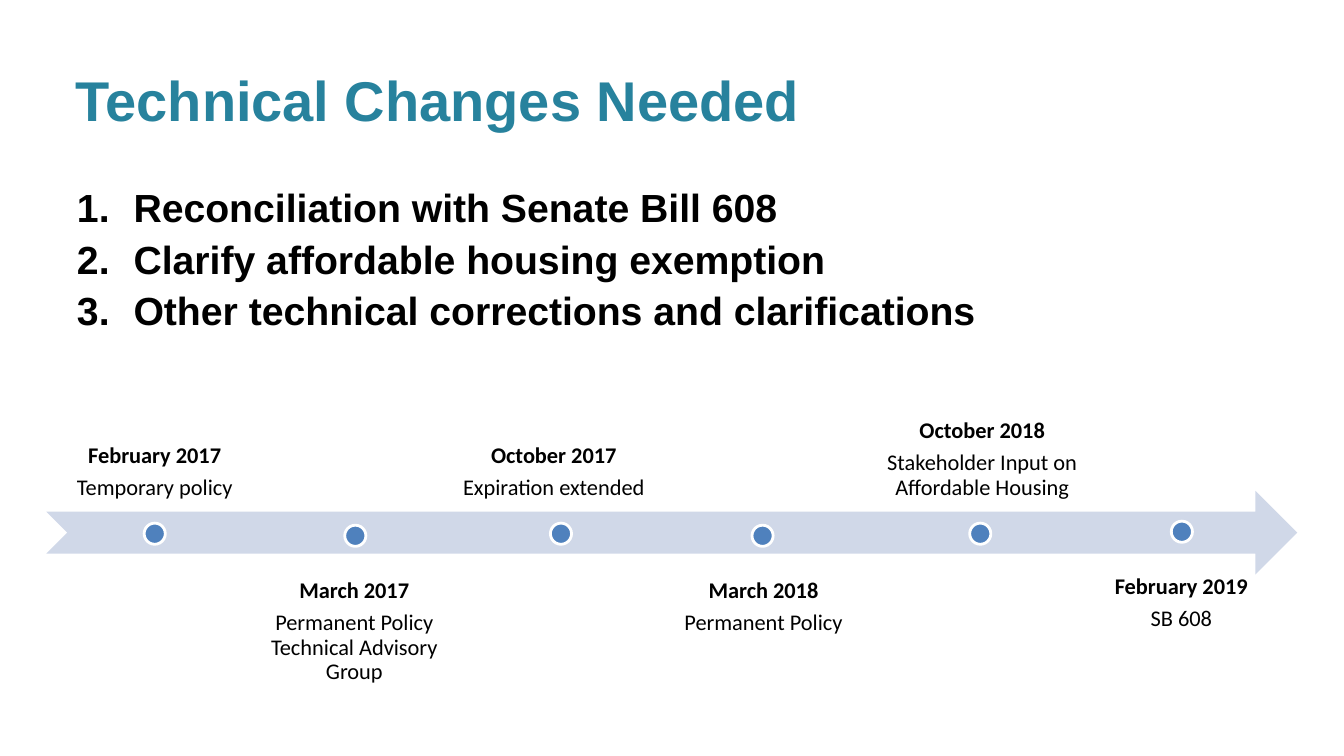
"""Build a slide of technical changes above a policy timeline."""

import dataclasses

import lxml.etree
import pptx
import pptx.dml.color
import pptx.enum.shapes
import pptx.enum.text
import pptx.oxml.ns
import pptx.shapes.autoshape
import pptx.slide
import pptx.text.text
import pptx.util

Pt = pptx.util.Pt
RGBColor = pptx.dml.color.RGBColor
Anchor = pptx.enum.text.MSO_ANCHOR
Shape = pptx.enum.shapes.MSO_SHAPE

TEAL = RGBColor(0x27, 0x82, 0x9D)
BLACK = RGBColor(0x00, 0x00, 0x00)
WHITE = RGBColor(0xFF, 0xFF, 0xFF)
BLUE = RGBColor(0x4F, 0x81, 0xBD)
PALE_BLUE = RGBColor(0xD0, 0xD8, 0xE8)

DOT_SIZE = 15.1
LABEL_INSET = 8.64
CHANGES = (
    "Reconciliation with Senate Bill 608",
    "Clarify affordable housing exemption",
    "Other technical corrections and clarifications",
)


@dataclasses.dataclass(frozen=True)
class Box:
    """A rectangle in points."""

    left: float
    top: float
    width: float
    height: float

    def lengths(self) -> tuple[pptx.util.Length, ...]:
        """Return the four measures as lengths."""
        return tuple(Pt(value) for value in dataclasses.astuple(self))


@dataclasses.dataclass(frozen=True)
class Milestone:
    """A dated event with its marker and label positions in points."""

    date: str
    event: str
    dot_x: float
    dot_y: float
    label_x: float
    label_top: float
    label_height: float
    anchor: Anchor
    label_width: float = 154.8


ABOVE = (306, 59.8, Anchor.BOTTOM)
BELOW = (405.4, 48.2, Anchor.TOP)
MILESTONES = (
    Milestone("February 2017", "Temporary policy", 110.5, 381.2, 110.5, *ABOVE),
    Milestone("March 2017", "Permanent Policy Technical Advisory Group",
              253.8, 382.7, 253.1, *BELOW),
    Milestone("October 2017", "Expiration extended", 400.7, 381.2, 395.6, *ABOVE),
    Milestone("March 2018", "Permanent Policy", 544.7, 382.7, 545.4, *BELOW),
    Milestone("October 2018", "Stakeholder Input on Affordable Housing",
              700.2, 381.2, 701.6, *ABOVE),
    Milestone("February 2019", "SB 608", 844.2, 379.8, 843.8, 402.5, 54,
              Anchor.TOP, 174.2),
)


def add_text(slide: pptx.slide.Slide, box: Box, lines: tuple[str, ...], inset: float = 0,
             anchor: Anchor = Anchor.TOP) -> list[pptx.text.text._Paragraph]:
    """Add a wrapping text box and return its paragraphs."""
    frame = slide.shapes.add_textbox(*box.lengths()).text_frame
    frame.word_wrap = True
    frame.vertical_anchor = anchor
    frame.margin_left = frame.margin_right = Pt(inset)
    frame.margin_top = frame.margin_bottom = Pt(inset)
    frame.text = "\n".join(lines)
    return list(frame.paragraphs)


def style(paragraph: pptx.text.text._Paragraph, name: str, size: float,
          color: RGBColor, bold: bool) -> None:
    """Format every run of a paragraph."""
    for run in paragraph.runs:
        run.font.name = name
        run.font.size = Pt(size)
        run.font.color.rgb = color
        run.font.bold = bold


def number(paragraph: pptx.text.text._Paragraph) -> None:
    """Give a paragraph automatic numbering with a hanging indent."""
    properties = paragraph._p.get_or_add_pPr()
    properties.set("marL", str(Pt(41.4)))
    properties.set("indent", str(Pt(-40.4)))
    numbering = lxml.etree.SubElement(properties, pptx.oxml.ns.qn("a:buAutoNum"))
    numbering.set("type", "arabicPeriod")


def add_filled(slide: pptx.slide.Slide, preset: Shape, box: Box,
               color: RGBColor) -> pptx.shapes.autoshape.Shape:
    """Add a flat shape without an outline."""
    shape = slide.shapes.add_shape(preset, *box.lengths())
    shape.shadow.inherit = False
    shape.fill.solid()
    shape.fill.fore_color.rgb = color
    shape.line.fill.background()
    return shape


def add_milestone(slide: pptx.slide.Slide, milestone: Milestone) -> None:
    """Add the marker and label of one milestone."""
    marker = add_filled(slide, Shape.OVAL, Box(
        milestone.dot_x - DOT_SIZE / 2, milestone.dot_y - DOT_SIZE / 2,
        DOT_SIZE, DOT_SIZE), BLUE)
    marker.line.color.rgb = WHITE
    marker.line.width = Pt(2)
    label = Box(milestone.label_x - milestone.label_width / 2, milestone.label_top,
                milestone.label_width, milestone.label_height)
    date, event = add_text(slide, label, (milestone.date, milestone.event),
                           LABEL_INSET, milestone.anchor)
    for paragraph in (date, event):
        paragraph.alignment = pptx.enum.text.PP_ALIGN.CENTER
        paragraph.line_spacing = 0.9
        paragraph.space_after = Pt(5.6)
        style(paragraph, "Calibri", 16, BLACK, paragraph is date)


def main() -> None:
    """Build and save the slide."""
    presentation = pptx.Presentation()
    presentation.slide_width = Pt(960)
    presentation.slide_height = Pt(540)
    slide = presentation.slides.add_slide(presentation.slide_layouts[6])

    add_filled(slide, Shape.NOTCHED_RIGHT_ARROW, Box(33.1, 350.6, 893.5, 59.8), PALE_BLUE)
    for milestone in MILESTONES:
        add_milestone(slide, milestone)

    (title,) = add_text(slide, Box(54, 46.8, 540.7, 49.7), ("Technical Changes Needed",))
    title.space_before = Pt(1)
    style(title, "Arial", 40, TEAL, True)

    for change in add_text(slide, Box(54, 128.2, 830.2, 109.4), CHANGES):
        change.line_spacing = 1.09
        change.space_before = Pt(0.1)
        number(change)
        style(change, "Arial", 28, BLACK, True)

    presentation.save("out.pptx")


if __name__ == "__main__":
    main()
